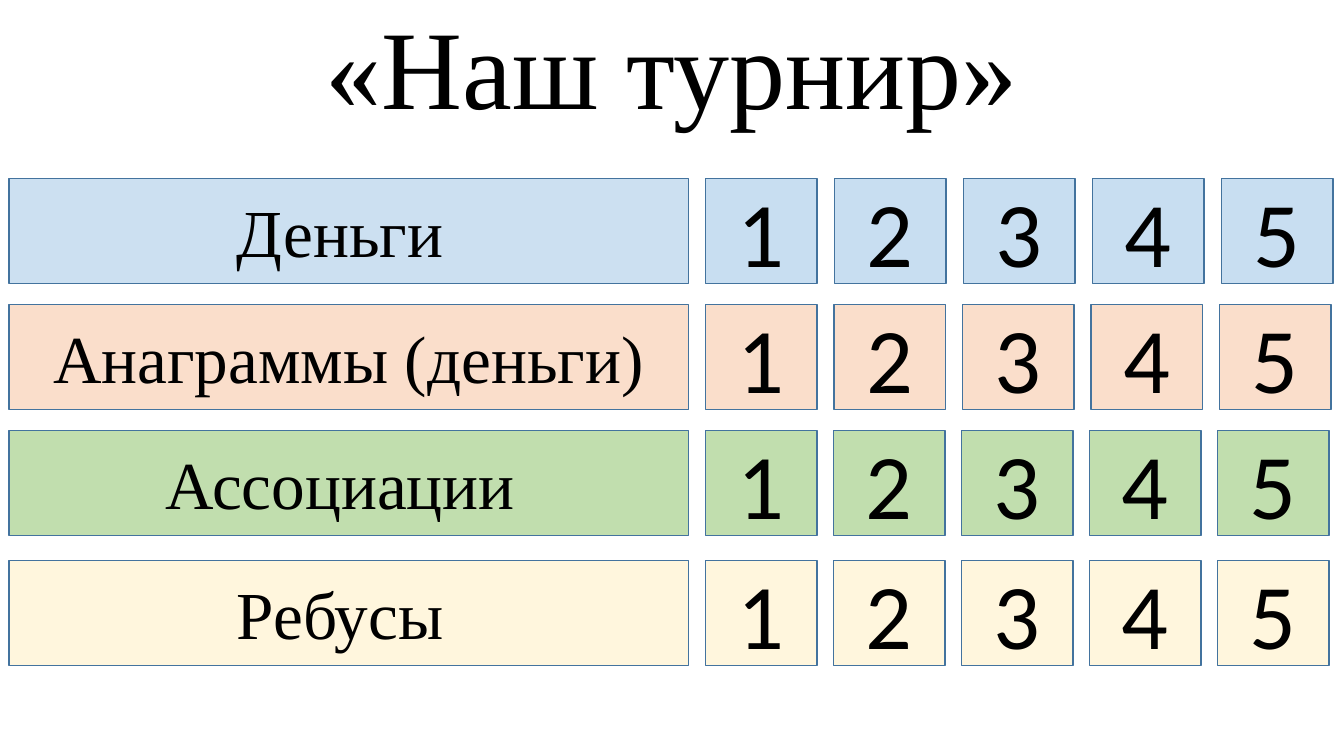
from lxml import etree
from pptx import Presentation
from pptx.dml.color import RGBColor
from pptx.enum.shapes import MSO_SHAPE as Shape
from pptx.enum.text import MSO_ANCHOR as Anchor, PP_ALIGN as Align
from pptx.oxml.ns import qn
from pptx.util import Pt

TITLE = "«Наш турнир»"
CATEGORIES = [
    {"name": "Деньги", "color": "blue", "opacity": (31, 33), "top": 127.4, "pitch": 92.16, "shift": 12},
    {"name": "Анаграммы (деньги)", "color": "peach", "opacity": (63, 63), "top": 217.4, "pitch": 91.8, "shift": 0},
    {"name": "Ассоциации", "color": "green", "opacity": (71, 71), "top": 307.4, "pitch": 91.44, "shift": 12},
    {"name": "Ребусы", "color": "cream", "opacity": (65, 65), "top": 400.3, "pitch": 91.44, "shift": 12},
]
QUESTIONS = range(1, 6)
COLORS = {
    "blue": "5B9BD5",
    "peach": "F8CBAD",
    "green": "A9D18E",
    "cream": "FFF2CC",
    "border": "43739E",
    "text": "000000",
}
SERIF, SANS = "Times New Roman", "Calibri"
NAME_LEFT, NAME_WIDTH = 6.4, 485.2
NUMBER_LEFT, NUMBER_WIDTH = 504, 79.5
ROW_HEIGHT = 75.1
INSET = 7.2


def color(name):
    return RGBColor.from_string(COLORS[name])


def style_text(frame, text, size, font_name):
    frame.text = text
    frame.word_wrap = True
    frame.vertical_anchor = Anchor.MIDDLE
    para = frame.paragraphs[0]
    para.alignment = Align.CENTER
    para.font.size = Pt(size)
    para.font.name = font_name
    para.font.color.rgb = color("text")
    return para


def add_cell(page, left, top, width, fill, opacity, text, size, font_name, shift=0):
    box = page.shapes.add_shape(Shape.RECTANGLE, Pt(left), Pt(top), Pt(width), Pt(ROW_HEIGHT))
    box.shadow.inherit = False
    box.fill.solid()
    box.fill.fore_color.rgb = color(fill)
    shade = box.fill._xPr.find(qn("a:solidFill"))[0]
    etree.SubElement(shade, qn("a:alpha"), val=str(opacity * 1000))
    box.line.color.rgb = color("border")
    box.line.width = Pt(1)
    style_text(box.text_frame, text, size, font_name)
    box.text_frame.margin_right = Pt(INSET + shift)


def main():
    deck = Presentation()
    deck.slide_width, deck.slide_height = Pt(960), Pt(540)
    page = deck.slides.add_slide(deck.slide_layouts[5])

    title = page.shapes.title
    title.left, title.top, title.width, title.height = Pt(66), Pt(0), Pt(828), Pt(104.4)
    style_text(title.text_frame, TITLE, 80, SERIF).line_spacing = 0.9

    for row in CATEGORIES:
        name_opacity, number_opacity = row["opacity"]
        add_cell(page, NAME_LEFT, row["top"], NAME_WIDTH, row["color"], name_opacity,
                 row["name"], 48, SERIF, row["shift"])
        for index, number in enumerate(QUESTIONS):
            add_cell(page, NUMBER_LEFT + index * row["pitch"], row["top"], NUMBER_WIDTH,
                     row["color"], number_opacity, str(number), 66, SANS)

    deck.save("out.pptx")


if __name__ == "__main__":
    main()
